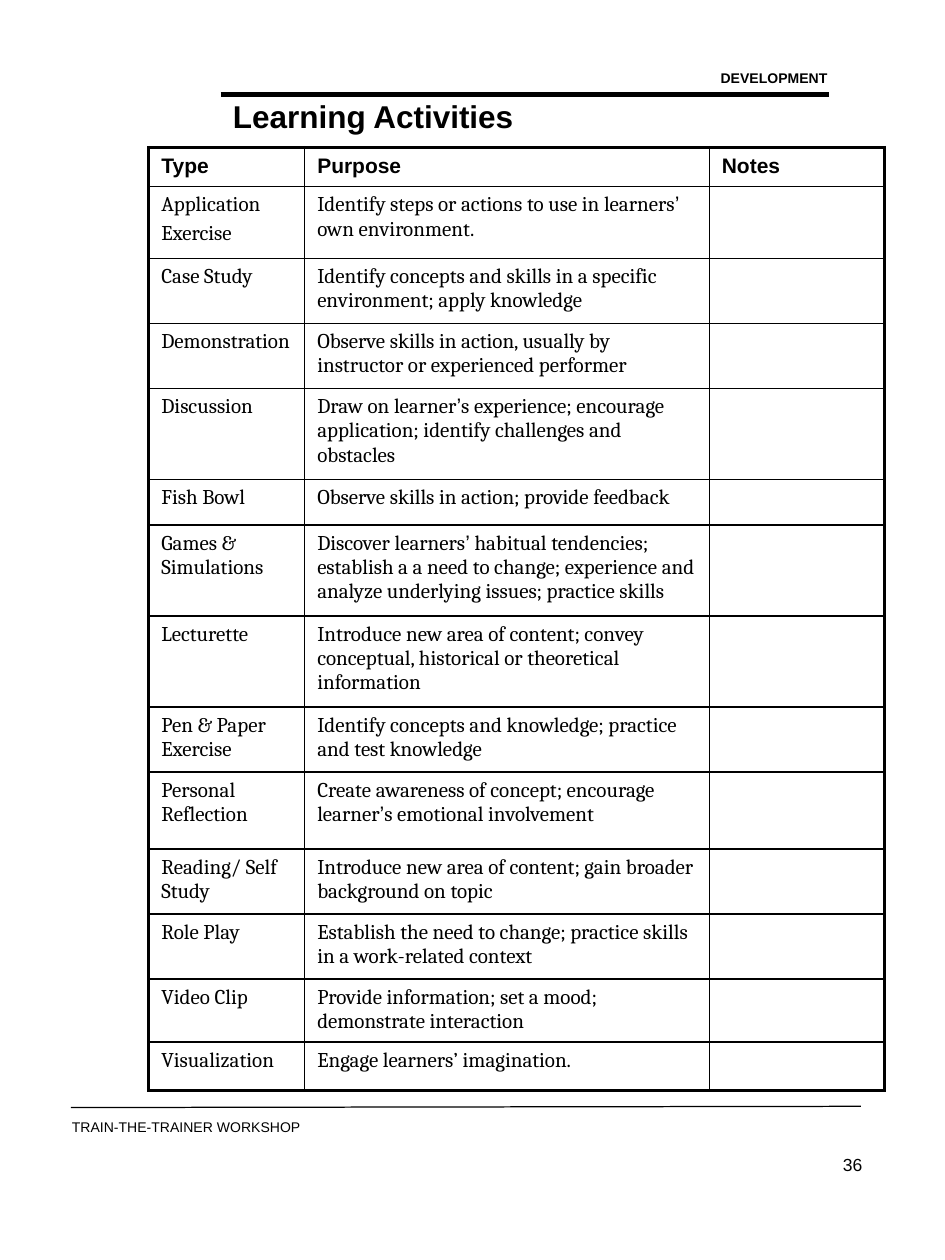
from lxml import etree
from pptx import Presentation
from pptx.dml.color import RGBColor
from pptx.enum.shapes import MSO_CONNECTOR
from pptx.enum.text import MSO_ANCHOR, PP_ALIGN
from pptx.oxml.ns import qn
from pptx.util import Pt

LINE = MSO_CONNECTOR.STRAIGHT
LEFT, RIGHT = PP_ALIGN.LEFT, PP_ALIGN.RIGHT
TOP, MIDDLE = MSO_ANCHOR.TOP, MSO_ANCHOR.MIDDLE
BLACK = "000000"
SANS, SERIF = "Arial", "Cambria"
THIN, THICK = 1, 2.25

COLS = [89.1, 231.2, 100.2]
HEADS = ["Type", "Purpose", "Notes"]
# Row height, type, purpose; "\n" starts a paragraph, "|" encloses sans text
ROWS = [
    (41, "Application\nExercise",
     "Identify steps or actions to use in learners|’| own environment."),
    (37.2, "Case Study",
     "Identify concepts and skills in a specific environment; apply knowledge"),
    (37.2, "Demonstration",
     "Observe skills in action, usually by instructor or experienced performer"),
    (52, "Discussion",
     "Draw on learner|’|s experience; encourage application; "
     "identify challenges and obstacles"),
    (26, "Fish Bowl", "Observe skills in action; provide feedback"),
    (52, "Games & Simulations",
     "Discover learners|’| habitual tendencies; establish a a need to change; "
     "experience and analyze underlying issues; practice skills"),
    (52, "Lecturette",
     "Introduce new area of content; convey conceptual, historical or "
     "theoretical information"),
    (37.2, "Pen & Paper Exercise",
     "Identify concepts and knowledge; practice and test knowledge"),
    (44, "Personal Reflection",
     "Create awareness of concept; encourage learner|’|s emotional involvement"),
    (37.2, "Reading/ Self Study",
     "Introduce new area of content; gain broader background on topic"),
    (37.2, "Role Play",
     "Establish the need to change; practice skills in a work-related context"),
    (36, "Video Clip",
     "Provide information; set a mood; demonstrate interaction"),
    (27.6, "Visualization", "Engage learners’ imagination."),
]


def color(code):
    return RGBColor.from_string(code)


def write(frame, text, size=12, font=SANS, bold=False, align=LEFT, gap=2.4):
    """Fill a text frame; gap is the space before later paragraphs."""
    frame.word_wrap = True
    for i, line in enumerate(text.split("\n")):
        para = frame.add_paragraph() if i else frame.paragraphs[0]
        para.alignment = align
        if i:
            para.space_before = Pt(gap)
        for j, part in enumerate(line.split("|")):
            if not part:
                continue
            run = para.add_run()
            run.text = part
            run.font.name = SANS if j % 2 else font
            run.font.size = Pt(size)
            run.font.bold = bold
            run.font.color.rgb = color(BLACK)


def add_text(slide, text, x, y, w, h, anchor=TOP, **style):
    box = slide.shapes.add_textbox(Pt(x), Pt(y), Pt(w), Pt(h))
    box.text_frame.vertical_anchor = anchor
    write(box.text_frame, text, **style)


def add_line(slide, x1, y1, x2, y2, width):
    line = slide.shapes.add_connector(LINE, Pt(x1), Pt(y1), Pt(x2), Pt(y2))
    line.line.color.rgb = color(BLACK)
    line.line.width = Pt(width)
    etree.SubElement(line._element.spPr, qn("a:effectLst"))


def set_edges(cell, widths):
    """Draw cell borders; widths are left, right, top, bottom."""
    props = cell._tc.get_or_add_tcPr()
    for i, (side, width) in enumerate(zip("LRTB", widths)):
        edge = etree.Element(qn("a:ln" + side), w=str(int(Pt(width))))
        fill = etree.SubElement(edge, qn("a:solidFill"))
        etree.SubElement(fill, qn("a:srgbClr"), val=BLACK)
        props.insert(i, edge)


def add_grid(slide, x, y):
    highs = [22.2] + [row[0] for row in ROWS]
    texts = [HEADS] + [[*row[1:], ""] for row in ROWS]
    last, end = len(highs) - 1, len(COLS) - 1
    table = slide.shapes.add_table(len(highs), len(COLS), Pt(x), Pt(y),
                                   Pt(sum(COLS)), Pt(sum(highs))).table
    table.first_row = table.horz_banding = False
    for col, wide in zip(table.columns, COLS):
        col.width = Pt(wide)
    for r, high in enumerate(highs):
        table.rows[r].height = Pt(high)
        for c, text in enumerate(texts[r]):
            cell = table.cell(r, c)
            cell.fill.background()
            outer = (c == 0, c == end, r == 0, r == last)
            set_edges(cell, [THICK if out else THIN for out in outer])
            write(cell.text_frame, text, bold=r == 0,
                  font=SERIF if r else SANS)
            if not text:  # keeps short rows from growing
                para = cell.text_frame.paragraphs[0]._p
                etree.SubElement(para, qn("a:endParaRPr"), sz="1200")


def main():
    deck = Presentation()
    deck.slide_width, deck.slide_height = Pt(540), Pt(720)
    slide = deck.slides.add_slide(deck.slide_layouts[6])
    add_line(slide, 40.5, 632.9, 492, 632.2, 0.7)
    add_text(slide, "TRAIN-THE-TRAINER WORKSHOP", 34, 635.8, 252, 16.6, size=8)
    add_text(slide, "36", 387.5, 656, 112.3, 48, size=10, align=RIGHT)
    add_line(slide, 126, 54, 474, 54, 3)
    add_text(slide, "Learning Activities", 126, 59, 337.7, 14.4,
             anchor=MIDDLE, size=18, bold=True)
    add_text(slide, "DEVELOPMENT", 294, 36, 186, 16.6,
             size=8, bold=True, align=RIGHT)
    add_grid(slide, 85, 84.4)
    deck.save("out.pptx")


if __name__ == "__main__":
    main()
